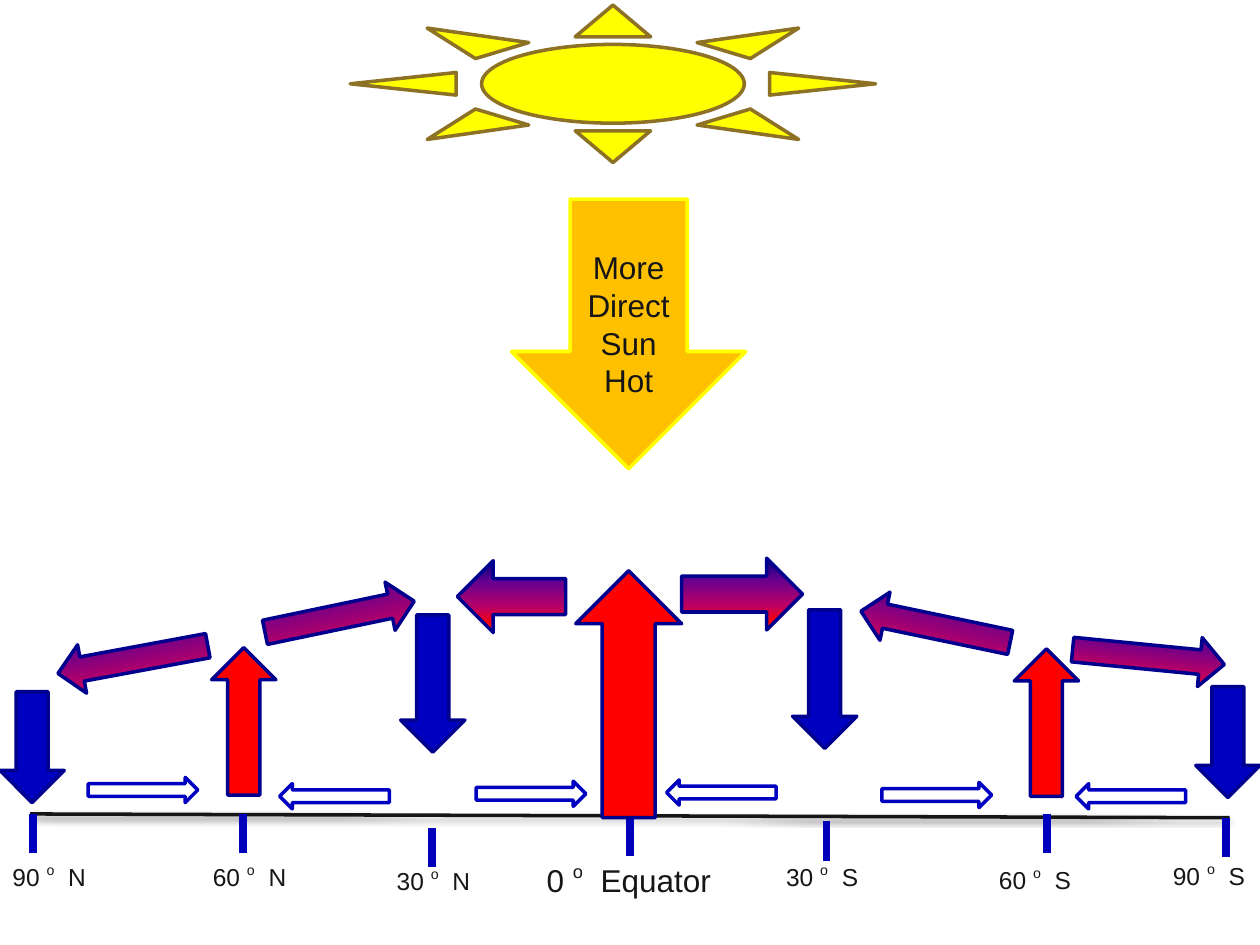
from lxml import etree
from pptx import Presentation
from pptx import util as u
from pptx.dml.color import RGBColor
from pptx.enum import shapes, text
from pptx.oxml.ns import qn

INK = "161616"
NAVY = "00008E"
BLUE = "0000C0"
RED = "FF0000"
COOLING_AIR = [(0, "000082"), (30, "66008F"), (65, "BA0066"), (90, "FF0000"), (100, "FF8200")]
KIND = shapes.MSO_SHAPE


def rgb(color):
    return RGBColor.from_string(color)


def style_run(run, size):
    run.font.name = "Arial"
    run.font.size = u.Pt(size)
    run.font.color.rgb = rgb(INK)


def fill_gradient(shape, stops):
    shape.fill.gradient()
    shape.fill.gradient_angle = 270
    stop_list = shape._element.spPr.find(".//" + qn("a:gsLst"))
    for old_stop in list(stop_list):
        stop_list.remove(old_stop)
    for percent, color in stops:
        stop = etree.SubElement(stop_list, qn("a:gs"), pos=str(percent * 1000))
        etree.SubElement(stop, qn("a:srgbClr"), val=color)


def add_figure(slide, kind, box, fill, line, rotation=0):
    """Add a preset shape; fill is a colour or a list of gradient stops."""
    figure = slide.shapes.add_shape(kind, *map(u.Inches, box))
    figure.shadow.inherit = False
    figure.rotation = rotation
    if isinstance(fill, list):
        fill_gradient(figure, fill)
    else:
        figure.fill.solid()
        figure.fill.fore_color.rgb = rgb(fill)
    figure.line.color.rgb = rgb(line)
    figure.line.width = u.Pt(2)
    return figure


def add_line(slide, start, end, color, width):
    """Add a straight line and return its empty effect list."""
    line = slide.shapes.add_connector(
        shapes.MSO_CONNECTOR.STRAIGHT, *map(u.Inches, (*start, *end)))
    line.line.color.rgb = rgb(color)
    line.line.width = u.Pt(width)
    return etree.SubElement(line._element.spPr, qn("a:effectLst"))


def add_ground(slide):
    effects = add_line(slide, (0.24, 6.46), (9.76, 6.49), INK, 2)
    shadow = etree.SubElement(effects, qn("a:outerShdw"), blurRad=str(u.Pt(3.1)),
                              dist=str(u.Pt(1.6)), dir="5400000", rotWithShape="0")
    black = etree.SubElement(shadow, qn("a:srgbClr"), val="000000")
    etree.SubElement(black, qn("a:alpha"), val="38000")


def add_latitude(slide, box, degrees, place, size):
    label = slide.shapes.add_textbox(*map(u.Inches, box))
    label.text_frame.word_wrap = False
    label.text_frame.auto_size = text.MSO_AUTO_SIZE.SHAPE_TO_FIT_TEXT
    paragraph = label.text_frame.paragraphs[0]
    for part in (f"{degrees} ", "o", f" {place}"):
        run = paragraph.add_run()
        run.text = part
        style_run(run, size)
    # Raised degree sign with some letter spacing after it
    degree_sign = paragraph.runs[1].font._element
    degree_sign.set("baseline", "45000")
    degree_sign.set("spc", str(size * 28))


def add_sunlight(slide):
    sunlight = add_figure(slide, KIND.DOWN_ARROW, (4.06, 1.58, 1.86, 2.14), "FFC000", "FFFF00")
    frame = sunlight.text_frame
    frame.word_wrap = True
    frame.margin_top = u.Inches(0.35)
    frame.vertical_anchor = text.MSO_ANCHOR.MIDDLE
    frame.text = "More\vDirect Sun Hot"
    frame.paragraphs[0].alignment = text.PP_ALIGN.CENTER
    for run in frame.paragraphs[0].runs:
        style_run(run, 18)


def main():
    prs = Presentation()
    prs.slide_width, prs.slide_height = u.Inches(10), u.Inches(7.5)
    slide = prs.slides.add_slide(prs.slide_layouts[6])

    # Ground with latitude ticks and labels
    add_ground(slide)
    latitudes = [
        # tick x, tick top, label left, label top, degrees, place
        (0.26, 6.46, 0, 6.79, 90, "N"),
        (1.93, 6.46, 1.59, 6.79, 60, "N"),
        (3.43, 6.57, 3.05, 6.82, 30, "N"),
        (5, 6.48, 4.24, 6.78, 0, "Equator"),
        (6.56, 6.52, 6.14, 6.79, 30, "S"),
        (8.31, 6.46, 7.83, 6.81, 60, "S"),
        (9.73, 6.49, 9.21, 6.78, 90, "S"),
    ]
    for x, tick_top, left, top, degrees, place in latitudes:
        add_line(slide, (x, tick_top), (x, tick_top + 0.31), "0000BC", 4.5)
        width, height, size = (0.79, 0.34, 14) if degrees else (1.53, 0.4, 18)
        add_latitude(slide, (left, top, width, height), degrees, place, size)

    add_sunlight(slide)

    # Warm air rising
    for box in [(4.57, 4.53, 0.84, 1.96), (1.68, 5.14, 0.51, 1.17), (8.05, 5.15, 0.51, 1.17)]:
        add_figure(slide, KIND.UP_ARROW, box, RED, NAVY)

    # Cold air sinking
    for left, top, height in [(3.18, 4.88, 1.09), (6.29, 4.84, 1.1),
                              (0, 5.49, 0.88), (9.49, 5.45, 0.88)]:
        add_figure(slide, KIND.DOWN_ARROW, (left, top, 0.51, height), BLUE, NAVY)

    # Air cooling as it moves aloft
    aloft = [
        (KIND.RIGHT_ARROW, (5.41, 4.43, 0.96, 0.57), 0),
        (KIND.LEFT_ARROW, (3.63, 4.45, 0.86, 0.57), 0),
        (KIND.LEFT_ARROW, (0.45, 5.04, 1.21, 0.39), 349.5),
        (KIND.RIGHT_ARROW, (8.51, 5.02, 1.21, 0.39), 5.6),
        (KIND.LEFT_ARROW, (6.82, 4.78, 1.21, 0.39), 11.8),
        (KIND.RIGHT_ARROW, (2.09, 4.7, 1.21, 0.39), 348.2),
    ]
    for kind, box, rotation in aloft:
        add_figure(slide, kind, box, COOLING_AIR, NAVY, rotation)

    # Surface winds
    winds = [
        (KIND.LEFT_ARROW, 8.54, 6.22), (KIND.RIGHT_ARROW, 0.7, 6.17),
        (KIND.LEFT_ARROW, 5.29, 6.19), (KIND.LEFT_ARROW, 2.22, 6.22),
        (KIND.RIGHT_ARROW, 3.78, 6.2), (KIND.RIGHT_ARROW, 7, 6.21),
    ]
    for kind, left, top in winds:
        add_figure(slide, kind, (left, top, 0.87, 0.2), "FFFFFF", BLUE)

    # Sun
    add_figure(slide, KIND.SUN, (2.78, 0.04, 4.17, 1.25), "FFFF00", "8D7125")

    prs.save("out.pptx")


if __name__ == "__main__":
    main()
